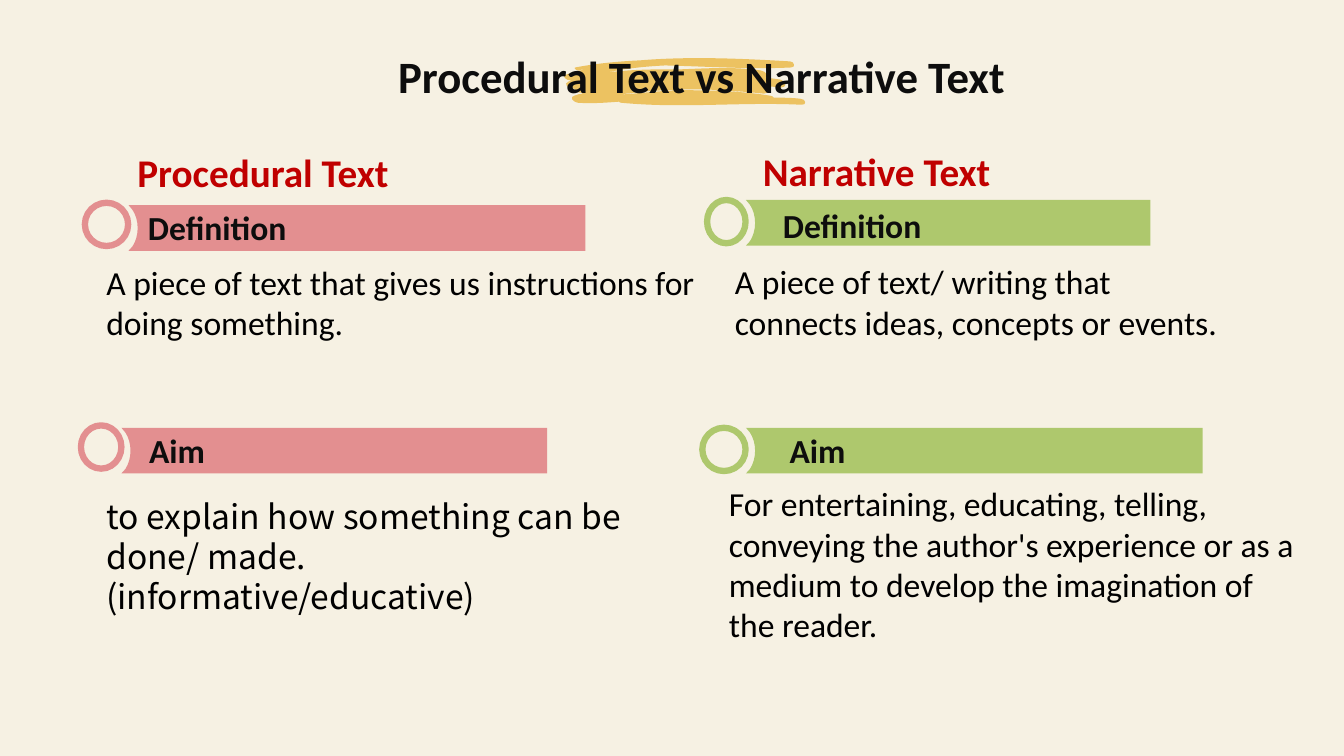
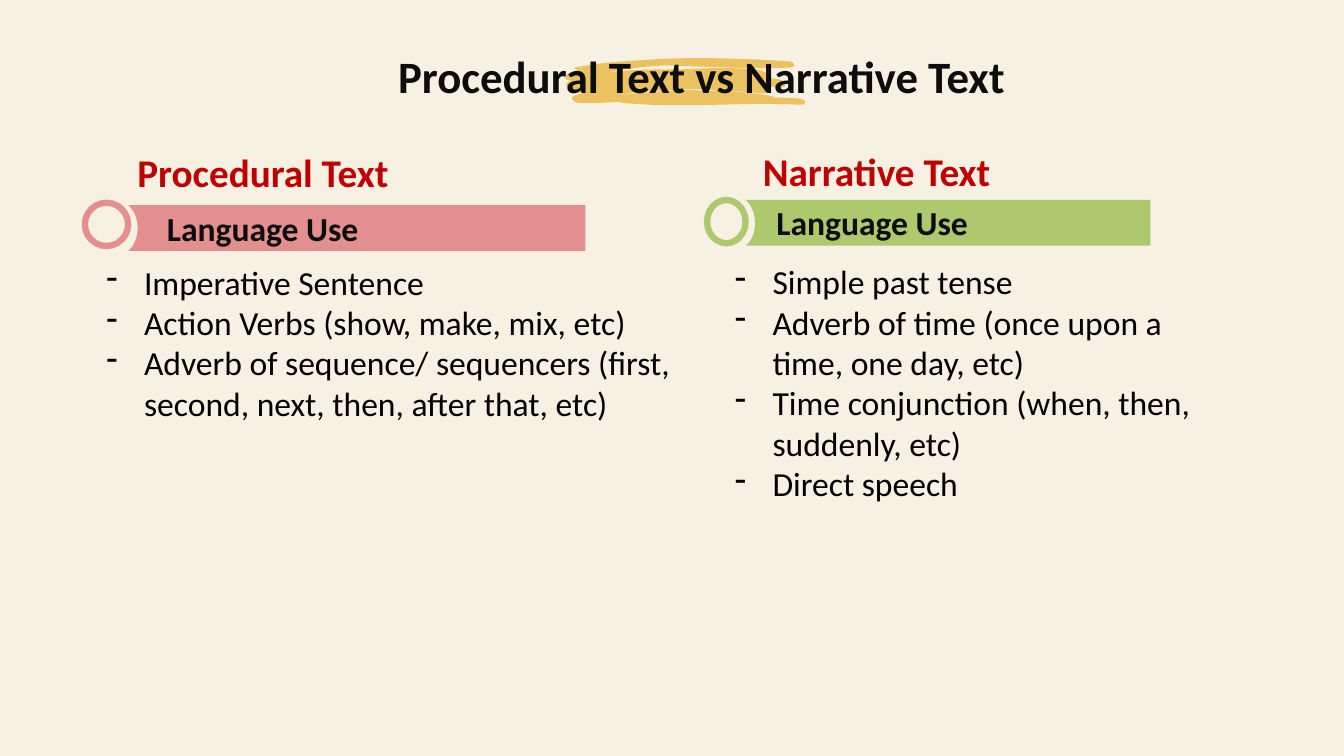
"""Build two slides comparing procedural and narrative texts."""
from dataclasses import dataclass
from math import cos, radians, sin

from lxml.etree import SubElement
from pptx import Presentation
from pptx.dml.color import RGBColor as RGB
from pptx.enum.shapes import MSO_SHAPE as SHAPE
from pptx.enum.text import MSO_AUTO_SIZE as AUTO, PP_ALIGN as ALIGN
from pptx.oxml.ns import qn
from pptx.presentation import Presentation as Deck
from pptx.slide import Slide
from pptx.util import Cm, Pt

Point = tuple[float, float]
Box = tuple[float, float, float, float]
Segment = tuple[float, ...]

COLORS = {
    "paper": "F6F0E1", "brush": "ECC261", "title": "0D0D0D", "body": "000000",
    "heading": "C00000", "pink": "E38F90", "green": "AEC86D",
}
FONT = "Calibri"
BAR_H, RING_H, LABEL_H, INDENT = 1.15, 1.09, 1.27, 0.95
BRUSH_SCALE = 0.0254
BRUSH_TILT = 15.6
BRUSH_CENTER = (681, 82)
BRUSH: list[Segment] = [
    (794, 98),
    (785, 97, 777, 97, 768, 97), (767, 96, 766, 95, 764, 95),
    (746, 92, 728, 91, 711, 90), (695, 90, 679, 89, 664, 90),
    (648, 91, 631, 93, 614, 94), (643, 90, 674, 88, 704, 89),
    (722, 90, 740, 91, 758, 93), (764, 93, 763, 88, 759, 86),
    (764, 86, 770, 86, 775, 87), (781, 87, 781, 81, 774, 79),
    (767, 78, 761, 77, 755, 77), (756, 77, 757, 77, 758, 77),
    (764, 77, 761, 71, 755, 70), (727, 66, 700, 68, 672, 69),
    (666, 69, 660, 69, 654, 69), (636, 69, 619, 70, 602, 72),
    (621, 68, 640, 66, 660, 65), (702, 66, 745, 69, 785, 67),
    (790, 67, 788, 61, 784, 61), (734, 58, 683, 56, 635, 60),
    (613, 61, 592, 63, 571, 67), (569, 67, 571, 70, 574, 70),
    (576, 69, 579, 69, 581, 69), (575, 70, 568, 72, 562, 74),
    (557, 75, 561, 80, 567, 80), (567, 80, 567, 80, 567, 80),
    (566, 80, 565, 81, 564, 81), (559, 83, 563, 88, 569, 88),
    (569, 88, 570, 88, 570, 88), (570, 90, 572, 92, 576, 92),
    (577, 93, 578, 93, 579, 93), (575, 93, 573, 94, 570, 95),
    (565, 96, 568, 101, 573, 102), (587, 103, 601, 102, 614, 101),
    (615, 102, 616, 102, 616, 102), (677, 108, 735, 101, 795, 104),
    (801, 105, 800, 98, 794, 98),
]
NOTCH: list[Segment] = [
    (0.1, 1.04), (0.18, 0.92, 0.23, 0.75, 0.23, 0.58),
    (0.23, 0.4, 0.18, 0.24, 0.1, 0.12),
]


@dataclass(frozen=True)
class Strip:
    """A coloured bar with a ring at its left end."""
    color: str
    bar: tuple[float, float, float]
    ring: tuple[float, float, float]


@dataclass(frozen=True)
class Block:
    """A labelled strip with the text below it."""
    strip: Strip
    label: str
    label_at: tuple[float, float, float]
    body: tuple[str, ...]
    body_box: Box
    dashes: bool = False
    font: str = FONT


PROCEDURAL = Strip("pink", (3.24, 5.17, 11.51), (2.14, 5.11, 1.09))
NARRATIVE = Strip("green", (18.8, 5.04, 10.19), (17.82, 5.04, 0.97))
PROCEDURAL_AIM = Strip("pink", (3.06, 10.78, 10.73), (2.04, 10.72, 1.02))
NARRATIVE_AIM = Strip("green", (18.8, 10.78, 11.51), (17.7, 10.78, 1.09))

SLIDES: list[list[Block]] = [
    [
        Block(PROCEDURAL, "Definition", (3.37, 5.1, 4.21),
              ("A piece of text that gives us instructions for doing something.",),
              (2.43, 6.47, 15.46, 2.31)),
        Block(NARRATIVE, "Definition", (19.37, 5.03, 4.21),
              ("A piece of text/ writing that connects ideas, concepts or events.",),
              (18.27, 6.46, 13.1, 2.31)),
        Block(PROCEDURAL_AIM, "Aim", (3.45, 10.72, 2.03),
              ("to explain how something can be done/ made. (informative/educative)",),
              (2.43, 12.36, 14.43, 2.31), font="Noto Sans CJK SC"),
        Block(NARRATIVE_AIM, "Aim", (19.59, 10.72, 2.03),
              ("For entertaining, educating, telling, conveying the author's experience "
               "or as a medium to develop the imagination of the reader.",),
              (18.12, 12.05, 14.81, 4.37)),
    ],
    [
        Block(PROCEDURAL, "Language Use", (3.83, 5.12, 5.58),
              ("Imperative Sentence", "Action Verbs (show, make, mix, etc)",
               "Adverb of sequence/ sequencers (first, second, next, then, after that, etc)"),
              (2.43, 6.47, 15.46, 4.37), dashes=True),
        Block(NARRATIVE, "Language Use", (19.19, 4.97, 5.58),
              ("Simple past tense", "Adverb of time (once upon a time, one day, etc)",
               "Time conjunction (when, then, suddenly, etc)", "Direct speech"),
              (18.27, 6.46, 13.1, 6.4), dashes=True),
    ],
]


def rgb(name: str) -> RGB:
    """Look up a palette colour."""
    return RGB.from_string(COLORS[name])


def pairs(segment: Segment) -> list[Point]:
    """Split a segment into its points."""
    return list(zip(segment[::2], segment[1::2]))


def untilt(point: Point) -> Point:
    """Turn a brush point back to level and scale it to centimetres."""
    cx, cy = BRUSH_CENTER
    dx, dy = point[0] - cx, point[1] - cy
    c, s = cos(radians(BRUSH_TILT)), sin(radians(BRUSH_TILT))
    return (cx + dx * c + dy * s) * BRUSH_SCALE, (cy - dx * s + dy * c) * BRUSH_SCALE


def add_outline(s: Slide, segments: list[list[Point]], color: str,
                rotation: float = 0) -> None:
    """Draw a closed outline; a segment of three points is a cubic curve."""
    points = [(Cm(x), Cm(y)) for segment in segments for x, y in segment]
    fb = s.shapes.build_freeform(*points[0])
    fb.add_line_segments(points[1:], close=True)
    sp = fb.convert_to_shape()
    lines = iter(sp._element.findall(f".//{qn('a:lnTo')}"))
    for segment in segments[1:]:
        parts = [next(lines) for _ in segment]
        if len(parts) == 3:
            curve = SubElement(parts[0].getparent(), qn("a:cubicBezTo"))
            parts[0].addprevious(curve)
            for part in parts:
                curve.append(part[0])
                part.getparent().remove(part)
    sp.rotation = rotation
    sp.shadow.inherit = False
    sp.fill.solid()
    sp.fill.fore_color.rgb = rgb(color)
    sp.line.fill.background()


def add_text(s: Slide, box: Box, lines: tuple[str, ...], size: int, color: str,
             heading: bool = False, dashes: bool = False, font: str = FONT) -> None:
    """Add a bold centred heading or a wrapped body text."""
    tf = s.shapes.add_textbox(*map(Cm, box)).text_frame
    tf.word_wrap = not heading
    tf.auto_size = AUTO.SHAPE_TO_FIT_TEXT
    for i, line in enumerate(lines):
        p = tf.add_paragraph() if i else tf.paragraphs[0]
        p.alignment = ALIGN.CENTER if heading else ALIGN.LEFT
        if dashes:
            pPr = p._p.get_or_add_pPr()
            pPr.set("marL", str(Cm(INDENT)))
            pPr.set("indent", str(-Cm(INDENT)))
            SubElement(pPr, qn("a:buFontTx"))
            SubElement(pPr, qn("a:buChar")).set("char", "-")
        r = p.add_run()
        r.text = line
        r.font.name, r.font.size, r.font.bold = font, Pt(size), heading
        r.font.color.rgb = rgb(color)


def add_strip(s: Slide, strip: Strip) -> None:
    """Draw the notched bar and its ring."""
    x, y, w = strip.bar
    outline = [(0, 0), (w, 0), (w, BAR_H), (0, BAR_H), *NOTCH]
    add_outline(s, [[(x + dx, y + dy) for dx, dy in pairs(segment)]
                    for segment in outline], strip.color)
    left, top, width = strip.ring
    sp = s.shapes.add_shape(SHAPE.OVAL, Cm(left), Cm(top), Cm(width), Cm(RING_H))
    sp.shadow.inherit = False
    sp.fill.background()
    sp.line.color.rgb = rgb(strip.color)
    sp.line.width = Pt(4.5)


def add_block(s: Slide, block: Block) -> None:
    """Draw a strip with its label and body."""
    add_strip(s, block.strip)
    add_text(s, block.body_box, block.body, 24, "body",
             dashes=block.dashes, font=block.font)
    add_text(s, (*block.label_at, LABEL_H), (block.label,), 24, "title", heading=True)


def add_headings(s: Slide) -> None:
    """Draw the brushed title and both column headings."""
    add_outline(s, [[untilt(point) for point in pairs(segment)] for segment in BRUSH],
                "brush", BRUSH_TILT)
    add_text(s, (9.28, 1.11, 16.81, 1.63), ("Procedural Text vs Narrative Text",),
             32, "title", heading=True)
    add_text(s, (3.06, 3.62, 7.13, 1.45), ("Procedural Text",), 28, "heading", heading=True)
    add_text(s, (18.75, 3.59, 6.68, 1.45), ("Narrative Text",), 28, "heading", heading=True)


def add_paper(prs: Deck, s: Slide) -> None:
    """Put the translucent paper sheet on the slide master."""
    sp = s.shapes.add_shape(SHAPE.RECTANGLE, 0, 0, prs.slide_width, prs.slide_height)
    sp.shadow.inherit = False
    sp.fill.solid()
    sp.fill.fore_color.rgb = rgb("paper")
    sp.line.fill.background()
    color = sp._element.spPr.find(f".//{qn('a:srgbClr')}")
    SubElement(color, qn("a:alpha")).set("val", "90000")
    prs.slide_master.shapes._spTree.insert(2, sp._element)


def main() -> None:
    """Build and save the presentation."""
    prs = Presentation()
    prs.slide_width, prs.slide_height = Cm(33.87), Cm(19.05)
    for i, blocks in enumerate(SLIDES):
        s = prs.slides.add_slide(prs.slide_layouts[6])
        if i == 0:
            add_paper(prs, s)
        add_headings(s)
        for block in blocks:
            add_block(s, block)
    prs.save("out.pptx")


if __name__ == "__main__":
    main()
